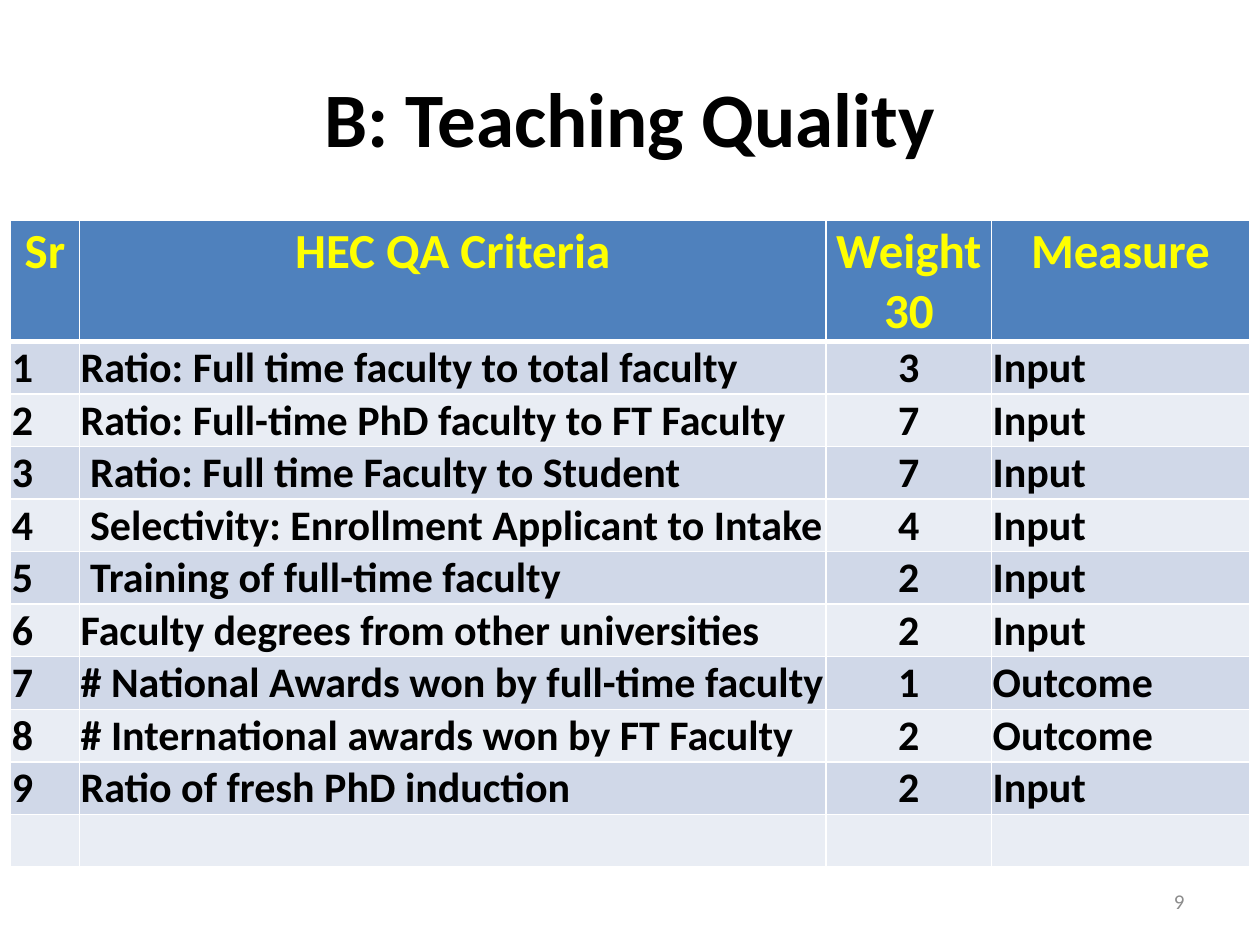
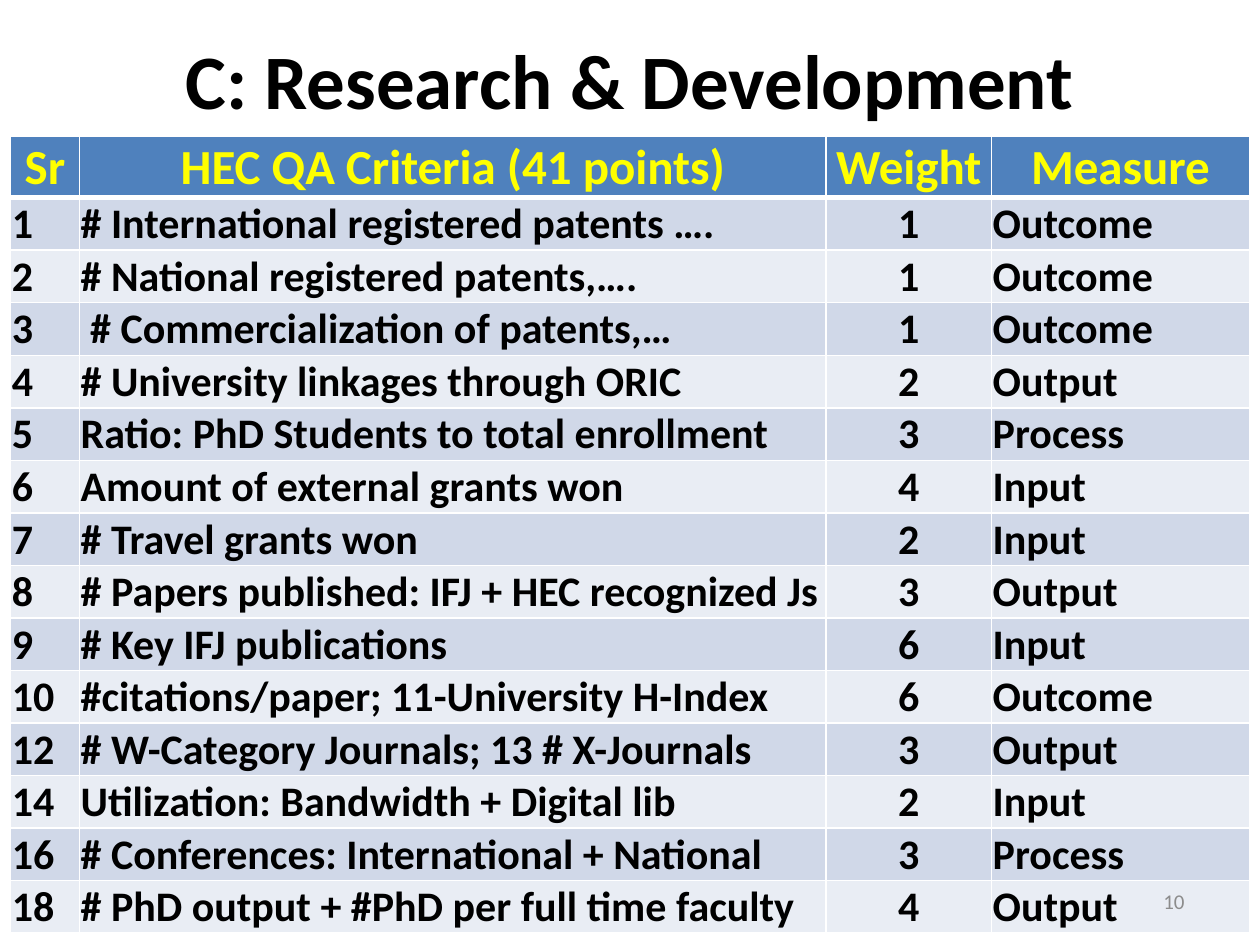
from dataclasses import dataclass

from lxml.etree import SubElement
from pptx import Presentation
from pptx.dml.color import RGBColor
from pptx.enum.text import MSO_ANCHOR, PP_ALIGN
from pptx.oxml.ns import qn
from pptx.util import Pt

SLIDES = [
    {
        "title": "B: Teaching Quality",
        "title_top": 21.6,
        "table_top": 126,
        "number": 9,
        "header": ("Sr", "HEC QA Criteria", "Weight\n30", "Measure"),
        "rows": [
            ("1", "Ratio: Full time faculty to total faculty", "3", "Input"),
            ("2", "Ratio: Full-time PhD faculty to FT Faculty", "7", "Input"),
            ("3", " Ratio: Full time Faculty to Student", "7", "Input"),
            ("4", " Selectivity: Enrollment Applicant to Intake", "4", "Input"),
            ("5", " Training of full-time faculty", "2", "Input"),
            ("6", "Faculty degrees from other universities", "2", "Input"),
            ("7", "# National Awards won by full-time faculty", "1", "Outcome"),
            ("8", "# International awards won by FT Faculty", "2", "Outcome"),
            ("9", "Ratio of fresh PhD induction", "2", "Input"),
            ("", "", "", ""),
        ],
    },
    {
        "title": "C: Research & Development",
        "title_top": 0,
        "table_top": 78,
        "number": 10,
        "header": ("Sr", "HEC QA Criteria (41 points)", "Weight", "Measure"),
        "rows": [
            ("1", "# International registered patents ….", "1", "Outcome"),
            ("2", "# National registered patents,….", "1", "Outcome"),
            ("3", " # Commercialization of patents,…", "1", "Outcome"),
            ("4", "# University linkages through ORIC", "2", "Output"),
            ("5", "Ratio: PhD Students to total enrollment", "3", "Process"),
            ("6", "Amount of external grants won", "4", "Input"),
            ("7", "# Travel grants won", "2", "Input"),
            ("8", "# Papers published: IFJ + HEC recognized Js", "3", "Output"),
            ("9", "# Key IFJ publications", "6", "Input"),
            ("10", "#citations/paper; 11-University H-Index", "6", "Outcome"),
            ("12", "# W-Category Journals; 13 # X-Journals", "3", "Output"),
            ("14", "Utilization: Bandwidth + Digital lib", "2", "Input"),
            ("16", "# Conferences: International + National", "3", "Process"),
            ("18", "# PhD output + #PhD per full time faculty", "4", "Output"),
        ],
    },
]


@dataclass(frozen=True)
class Theme:
    font: str = "Calibri"
    text: str = "000000"
    number: str = "8C8C8C"
    header_text: str = "FFFF00"
    header_fill: str = "4F81BD"
    bands: tuple = ("D0D8E8", "E9EDF4")
    border: str = "FFFFFF"
    title_size: int = 44
    header_size: int = 28
    body_size: int = 24
    number_size: int = 12


THEME = Theme()
TABLE_LEFT = 6
COLUMN_WIDTHS = (39.4, 426.7, 94.5, 147.4)
WEIGHT_COLUMN = 2
HEADER_LINE, ROW_HEIGHT = 34.3, 30
INSET = 0.72
THIN, THICK = 1, 3


def style_text(tf, size, color, bold=False, align=PP_ALIGN.LEFT):
    for p in tf.paragraphs:
        p.alignment = align
        for r in p.runs:
            r.font.name = THEME.font
            r.font.size = Pt(size)
            r.font.bold = bold
            r.font.color.rgb = RGBColor.from_string(color)


def add_borders(cell, top, bottom):
    tc_pr = cell._tc.get_or_add_tcPr()
    for side, width in (("L", THIN), ("R", THIN), ("T", top), ("B", bottom)):
        ln = SubElement(tc_pr, qn(f"a:ln{side}"), w=str(Pt(width)))
        fill = SubElement(ln, qn("a:solidFill"))
        SubElement(fill, qn("a:srgbClr"), val=THEME.border)


def style_cell(cell, row, col):
    cell.margin_left = cell.margin_right = cell.margin_top = Pt(INSET)
    cell.margin_bottom = 0
    add_borders(cell, THICK if row == 1 else THIN, THICK if row == 0 else THIN)
    header = row == 0
    centred = header or col == WEIGHT_COLUMN
    cell.fill.solid()
    cell.fill.fore_color.rgb = RGBColor.from_string(
        THEME.header_fill if header else THEME.bands[(row - 1) % 2])
    style_text(cell.text_frame,
               THEME.header_size if header else THEME.body_size,
               THEME.header_text if header else THEME.text,
               True, PP_ALIGN.CENTER if centred else PP_ALIGN.LEFT)


def add_title(s, text, top):
    sp = s.shapes.title
    sp.left, sp.top, sp.width, sp.height = Pt(36), Pt(top), Pt(648), Pt(90)
    sp.text_frame.text = text
    sp.text_frame.vertical_anchor = MSO_ANCHOR.MIDDLE
    style_text(sp.text_frame, THEME.title_size, THEME.text, True, PP_ALIGN.CENTER)


def add_criteria_table(s, top, header, rows):
    cells = [header, *rows]
    header_lines = max(label.count("\n") + 1 for label in header)
    heights = [HEADER_LINE * header_lines] + [ROW_HEIGHT] * len(rows)
    table = s.shapes.add_table(
        len(cells), len(header), Pt(TABLE_LEFT), Pt(top),
        Pt(sum(COLUMN_WIDTHS)), Pt(sum(heights))).table
    for column, width in zip(table.columns, COLUMN_WIDTHS):
        column.width = Pt(width)
    for row, (values, height) in enumerate(zip(cells, heights)):
        table.rows[row].height = Pt(height)
        for col, value in enumerate(values):
            cell = table.cell(row, col)
            cell.text_frame.text = value
            style_cell(cell, row, col)


def add_slide_number(s, number):
    tf = s.shapes.add_textbox(Pt(516), Pt(500.5), Pt(168), Pt(28.8)).text_frame
    tf.word_wrap = True
    tf.vertical_anchor = MSO_ANCHOR.MIDDLE
    tf.text = str(number)
    style_text(tf, THEME.number_size, THEME.number, align=PP_ALIGN.RIGHT)


def main():
    prs = Presentation()
    prs.slide_width, prs.slide_height = Pt(720), Pt(540)
    for content in SLIDES:
        s = prs.slides.add_slide(prs.slide_layouts.get_by_name("Title Only"))
        add_title(s, content["title"], content["title_top"])
        add_criteria_table(s, content["table_top"], content["header"], content["rows"])
        add_slide_number(s, content["number"])
    prs.save("out.pptx")


if __name__ == "__main__":
    main()
